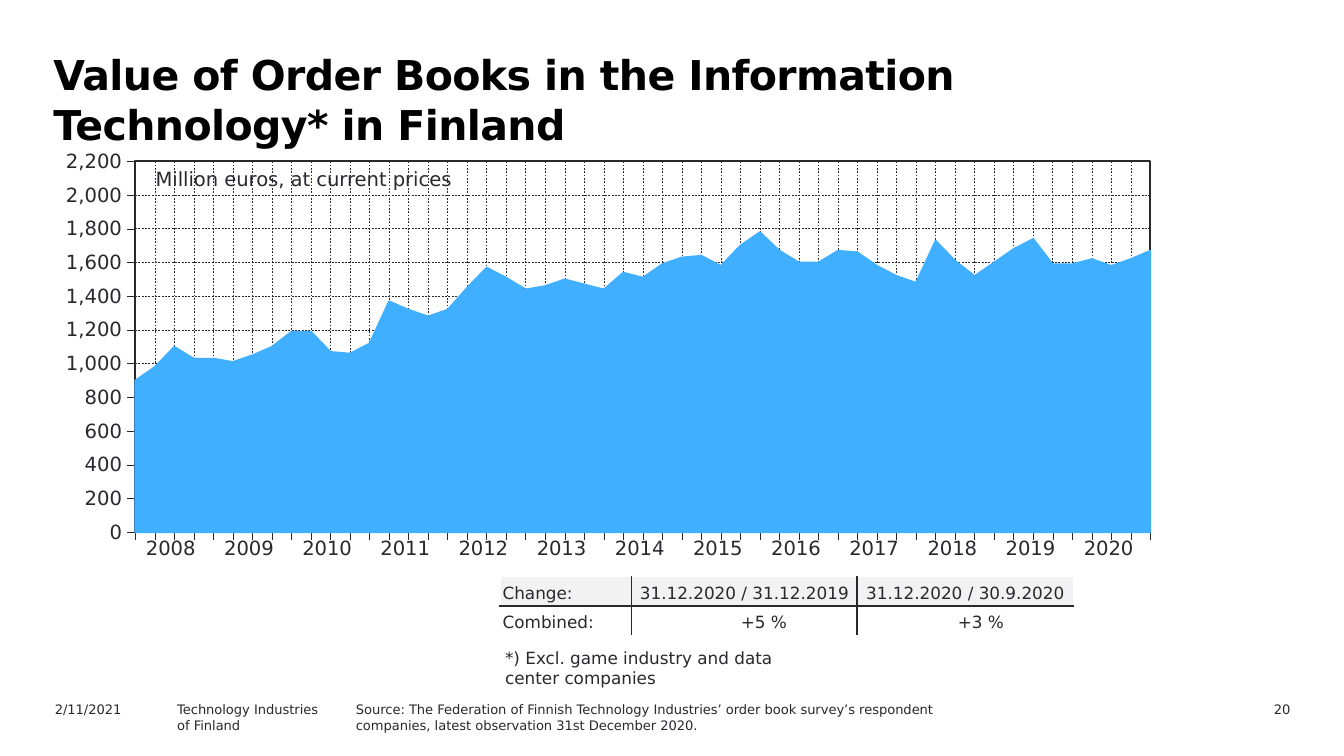
from lxml import etree
from pptx import Presentation
from pptx.chart.data import CategoryChartData
from pptx.dml.color import RGBColor
from pptx.enum.chart import XL_CHART_TYPE, XL_TICK_LABEL_POSITION, XL_TICK_MARK
from pptx.enum.dml import MSO_LINE
from pptx.enum.text import MSO_ANCHOR, PP_ALIGN
from pptx.oxml import parse_xml
from pptx.oxml.ns import nsdecls, qn
from pptx.util import Pt

LEFT, CENTER, RIGHT = PP_ALIGN.LEFT, PP_ALIGN.CENTER, PP_ALIGN.RIGHT
BOTTOM = MSO_ANCHOR.BOTTOM
DASH = MSO_LINE.DASH
OUTSIDE = XL_TICK_MARK.OUTSIDE
NO_LABELS = XL_TICK_LABEL_POSITION.NONE
AREA_STACKED = XL_CHART_TYPE.AREA_STACKED

INK = RGBColor(0x29, 0x28, 0x2E)
BLACK = RGBColor(0, 0, 0)
WHITE = RGBColor(0xFF, 0xFF, 0xFF)
GREY = RGBColor(0xF2, 0xF2, 0xF2)
BLUE = RGBColor(0x40, 0xAF, 0xFF)
FONT = "DejaVu Sans"
NO_STYLE = "{2D5ABB26-0587-4C30-8999-92F81FD0307C}"

TITLE = "Value of Order Books in the Information Technology* in Finland"
UNIT = "Million euros, at current prices"
FOOTNOTE = "*) Excl. game industry and data center companies"
SOURCE = ("Source: The Federation of Finnish Technology Industries’ order book survey’s "
          "respondent companies, latest observation 31st December 2020.")
# Footer: left, width, lines, alignment
FOOTERS = [
    (183.6, 360, [SOURCE], LEFT),
    (87.84, 129.6, ["Technology Industries", "of Finland"], LEFT),
    (22.32, 72, ["2/11/2021"], LEFT),
    (630.72, 67.68, ["20"], RIGHT),
]
ORDER_BOOKS = [
    900, 980, 1100, 1030, 1030, 1010, 1050, 1100, 1190, 1190, 1070, 1060, 1120, 1370,
    1320, 1280, 1320, 1450, 1570, 1510, 1440, 1460, 1500, 1470, 1440, 1540, 1510, 1590,
    1630, 1640, 1580, 1700, 1780, 1670, 1600, 1600, 1670, 1660, 1580, 1520, 1480, 1730,
    1610, 1520, 1600, 1680, 1740, 1590, 1590, 1620, 1580, 1620, 1670]
CHANGES = [["Change:", "31.12.2020 / 31.12.2019", "31.12.2020 / 30.9.2020"],
           ["Combined:", "+5 %", "+3 %"]]
YEARS = [str(year) for year in range(2008, 2021)]


def add_run(p, text, size, color=INK, bold=False):
    r = p.add_run()
    r.text = text
    font = r.font
    font.name, font.size, font.bold = FONT, Pt(size), bold
    font.color.rgb = color
    return r


def add_text(s, box, lines, size, align=LEFT, wrap=True):
    tf = s.shapes.add_textbox(*map(Pt, box)).text_frame
    tf.word_wrap = wrap
    for i, line in enumerate(lines):
        p = tf.add_paragraph() if i else tf.paragraphs[0]
        p.alignment = align
        add_run(p, line, size)
    return tf


def add_plain_table(s, rows, left, top, widths, row_height):
    """Add a table without style or banding and return it."""
    frame = s.shapes.add_table(len(rows), len(widths), Pt(left), Pt(top),
                               Pt(sum(widths)), Pt(row_height * len(rows)))
    table = frame.table
    table.first_row = table.horz_banding = False
    table._tbl.tblPr.find(qn("a:tableStyleId")).text = NO_STYLE
    for column, width in zip(table.columns, widths):
        column.width = Pt(width)
    for row in table.rows:
        row.height = Pt(row_height)
    return table


def set_borders(cell, colors):
    """Draw 1 pt borders; colors are in the order left, right, top, bottom."""
    tcPr = cell._tc.get_or_add_tcPr()
    for i, (side, color) in enumerate(zip("LRTB", colors)):
        tcPr.insert(i, parse_xml(
            f'<a:ln{side} {nsdecls("a")} w="12700"><a:solidFill>'
            f'<a:srgbClr val="{color}"/></a:solidFill></a:ln{side}>'))


def add_title(s):
    tf = add_text(s, (20.16, 22.32, 629.28, 51.12), [], 22)
    p = tf.paragraphs[0]
    p._p.get_or_add_pPr().set("marL", str(Pt(1.44)))
    p.line_spacing = Pt(27)
    r = add_run(p, TITLE, 22, BLACK, True)
    r._r.get_or_add_rPr().set("spc", "-30")


def add_order_chart(s):
    data = CategoryChartData(number_format="#,##0")
    data.categories = [str(i + 1) for i in range(len(ORDER_BOOKS))]
    data.add_series("Series 1", ORDER_BOOKS)
    chart = s.shapes.add_chart(AREA_STACKED, Pt(22.32), Pt(79.92), Pt(668.88),
                               Pt(224.64), data).chart
    chart.has_legend = chart.has_title = False
    chart.font.name, chart.font.size = FONT, Pt(10.5)
    chart.font.color.rgb = INK
    plot = chart.plots[0]
    plot.vary_by_categories = False
    series = plot.series[0]
    series.format.fill.solid()
    series.format.fill.fore_color.rgb = BLUE
    series.format.line.color.rgb = BLUE
    series.format.line.width = Pt(0.88)

    for axis in (chart.category_axis, chart.value_axis):
        axis.major_tick_mark = OUTSIDE
        axis.format.line.color.rgb = INK
        axis.format.line.width = Pt(0.22)
        axis.has_major_gridlines = True
        grid = axis.major_gridlines.format.line
        grid.color.rgb, grid.width, grid.dash_style = INK, Pt(0.25), DASH
    chart.category_axis.tick_label_position = NO_LABELS
    values = chart.value_axis
    values.minimum_scale, values.maximum_scale, values.major_unit = 0, 2200, 200
    values.tick_labels.number_format = "#,##0"
    values.tick_labels.number_format_is_linked = False
    values._element.find(qn("c:crossBetween")).set("val", "midCat")

    area = chart._chartSpace.chart.plotArea
    for old in area.findall(qn("c:layout")):
        area.remove(old)
    layout = parse_xml(f'<c:layout {nsdecls("c")}><c:manualLayout/></c:layout>')
    for tag, val in (("layoutTarget", "inner"), ("xMode", "edge"), ("yMode", "edge"),
                     ("x", 0.075), ("y", 0.029), ("w", 0.813), ("h", 0.885)):
        etree.SubElement(layout[0], qn(f"c:{tag}")).set("val", str(val))
    area.insert(0, layout)
    area.append(parse_xml(
        f'<c:spPr {nsdecls("c", "a")}><a:noFill/><a:ln w="12700"><a:solidFill>'
        f'<a:srgbClr val="{INK}"/></a:solidFill></a:ln></c:spPr>'))


def add_change_table(s):
    table = add_plain_table(s, CHANGES, 267.84, 308.88, (70.56, 120.6, 116.2), 15.84)
    for i, row in enumerate(CHANGES):
        for j, text in enumerate(row):
            cell = table.cell(i, j)
            cell.vertical_anchor = BOTTOM
            cell.margin_left = cell.margin_right = Pt(1.44)
            cell.margin_top = cell.margin_bottom = Pt(1.44)
            cell.fill.solid()
            cell.fill.fore_color.rgb = WHITE if i else GREY
            p = cell.text_frame.paragraphs[0]
            if j:
                p.alignment = RIGHT if i else CENTER
                if i:
                    cell.margin_right = Pt(37.44)
            add_run(p, text, 9)
            inner = (j > 0, j < len(row) - 1, i > 0, i < len(CHANGES) - 1)
            set_borders(cell, [INK if side else WHITE for side in inner])


def add_year_table(s):
    table = add_plain_table(s, [YEARS], 70.56, 284.4, [544.32 / len(YEARS)] * len(YEARS), 22.32)
    for cell, year in zip(table.iter_cells(), YEARS):
        cell.fill.background()
        p = cell.text_frame.paragraphs[0]
        p.alignment = CENTER
        add_run(p, year, 10.5)


def main():
    prs = Presentation()
    prs.slide_width, prs.slide_height = Pt(720), Pt(405)
    s = prs.slides.add_slide(prs.slide_layouts[6])
    add_title(s)
    add_order_chart(s)
    add_text(s, (76.32, 85.68, 175.68, 19.44), [UNIT], 10.5, wrap=False)
    add_change_table(s)
    add_text(s, (263.52, 343.44, 187, 28.8), [FOOTNOTE], 9)
    for left, width, lines, align in FOOTERS:
        add_text(s, (left, 372.24, width, 12.96), lines, 7, align)
    add_year_table(s)
    prs.save("out.pptx")


if __name__ == "__main__":
    main()
